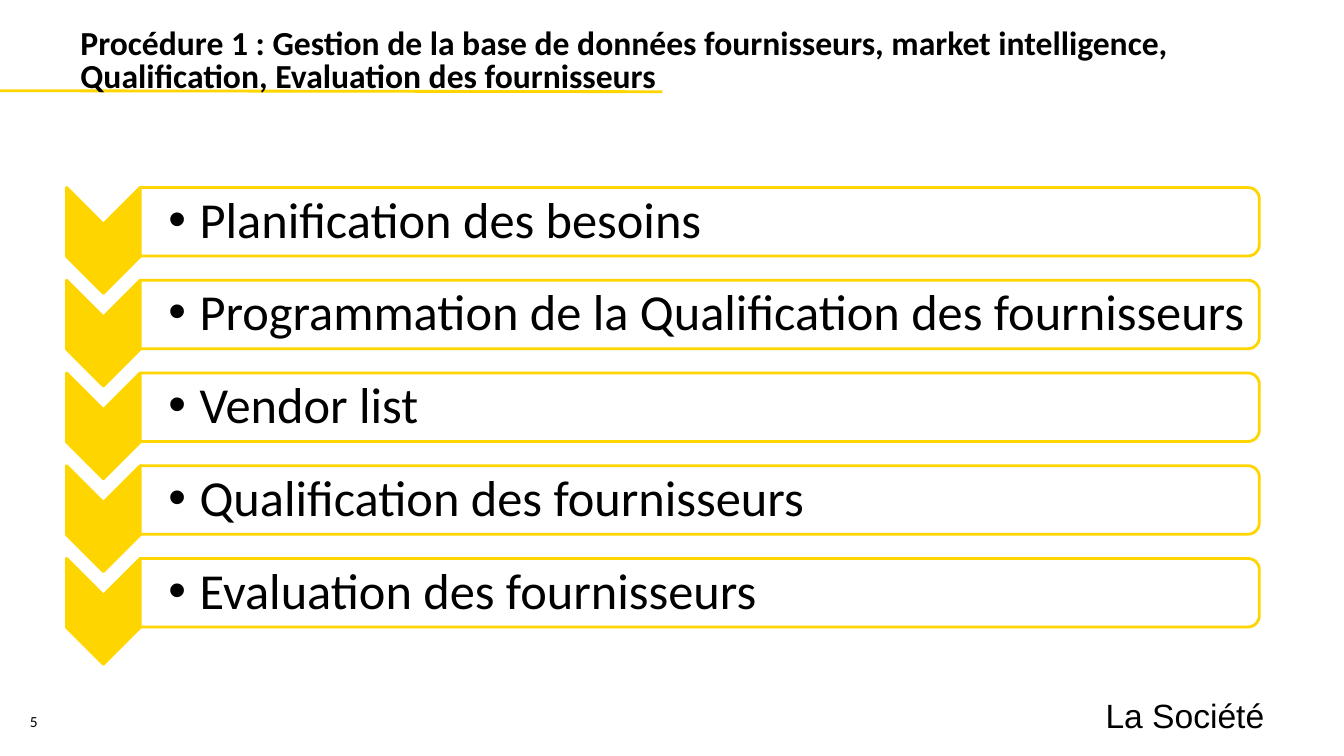
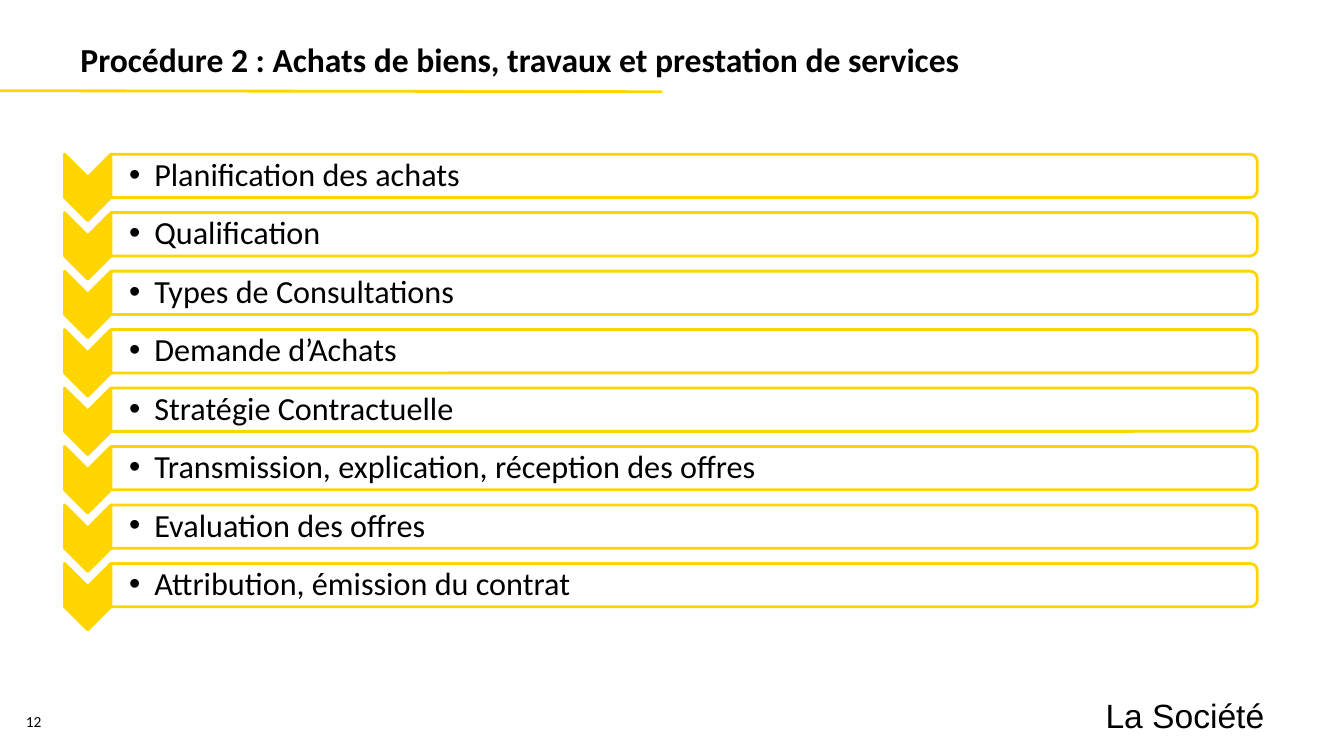
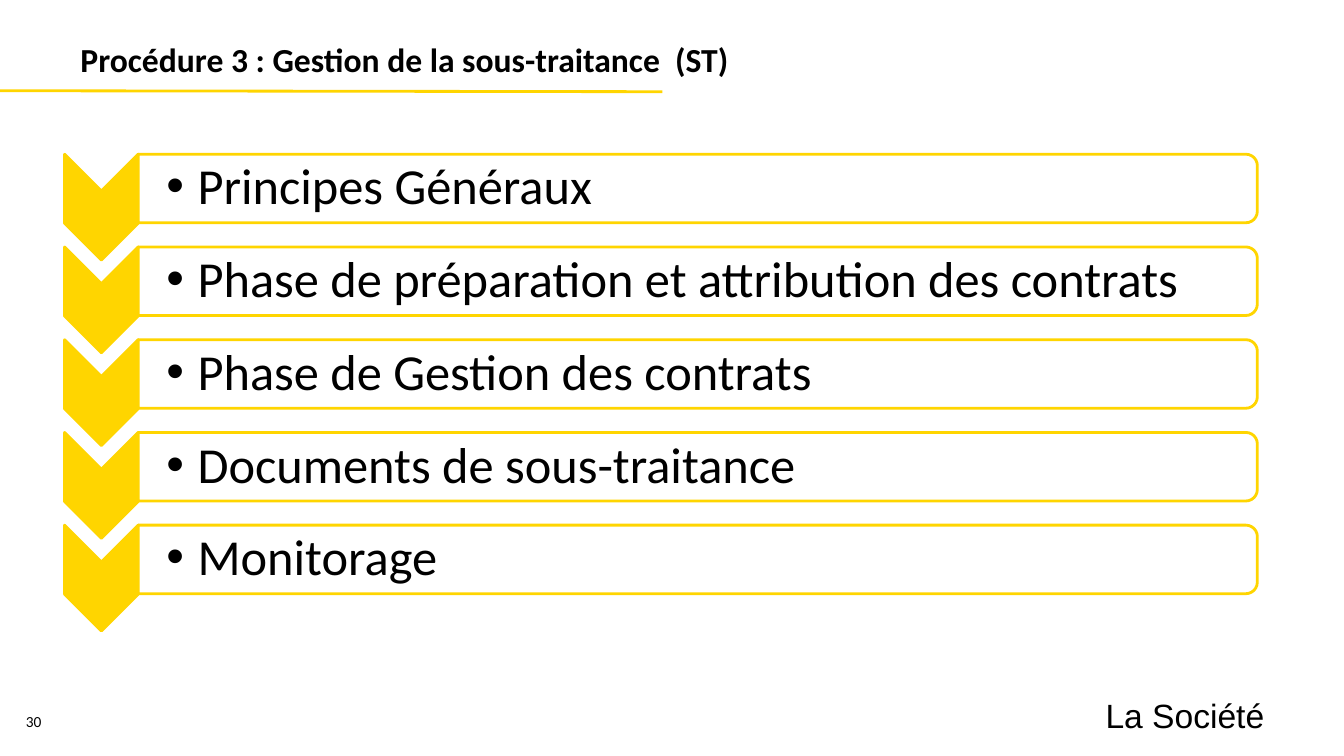
from dataclasses import dataclass

from lxml import etree
from pptx import Presentation
from pptx.dml.color import RGBColor
from pptx.enum.shapes import MSO_CONNECTOR, MSO_SHAPE
from pptx.enum.text import MSO_ANCHOR, PP_ALIGN
from pptx.oxml.ns import qn
from pptx.util import Inches, Pt

STRAIGHT = MSO_CONNECTOR.STRAIGHT
CHEVRON, BAR = MSO_SHAPE.CHEVRON, MSO_SHAPE.ROUND_2_SAME_RECTANGLE
MIDDLE, BOTTOM = MSO_ANCHOR.MIDDLE, MSO_ANCHOR.BOTTOM
LEFT, CENTER, RIGHT = PP_ALIGN.LEFT, PP_ALIGN.CENTER, PP_ALIGN.RIGHT

COLORS = {"yellow": "FFD500", "white": "FFFFFF", "black": "000000"}
LINE_WIDTH = Pt(2)
DEFAULT_INSETS = (0.1, 0.05, 0.1, 0.05)
FOOTER = "La Société"


@dataclass
class StepStyle:
    """Measures of one row in a step list, in inches; size in points."""
    pitch: float
    chevron_width: float
    chevron_height: float
    bar_width: float
    bar_height: float
    text_height: float
    insets: tuple
    indent: float
    size: int


LARGE = StepStyle(0.92, 0.73, 1.05, 11.1, 0.68, 0.62,
                  (0.28, 0.03, 0.03, 0.03), 0.31, 36)
SMALL = StepStyle(0.58, 0.46, 0.66, 11.37, 0.43, 0.39,
                  (0.18, 0.02, 0.02, 0.02), 0.25, 23)

# Page number, title, list style, list left and top, steps
PROCEDURES = [
    ("5", "Procédure 1 : Gestion de la base de données fournisseurs, "
     "market intelligence, Qualification, Evaluation des fournisseurs",
     LARGE, 0.66, 1.86,
     ["Planification des besoins",
      "Programmation de la Qualification des fournisseurs",
      "Vendor list",
      "Qualification des fournisseurs",
      "Evaluation des fournisseurs"]),
    ("12", "Procédure 2 : Achats de biens, travaux et prestation de services",
     SMALL, 0.64, 1.53,
     ["Planification des achats",
      "Qualification",
      "Types de Consultations",
      "Demande d’Achats",
      "Stratégie Contractuelle",
      "Transmission, explication, réception des offres",
      "Evaluation des offres",
      "Attribution, émission du contrat"]),
    ("30", "Procédure 3 : Gestion de la sous-traitance  (ST)",
     LARGE, 0.64, 1.53,
     ["Principes Généraux",
      "Phase de préparation et attribution des contrats",
      "Phase de Gestion des contrats",
      "Documents de sous-traitance",
      "Monitorage"]),
]


def color(name):
    return RGBColor.from_string(COLORS[name])


def add_text(slide, text, area, size, font="Calibri", bold=False,
             align=LEFT, anchor=MIDDLE, insets=DEFAULT_INSETS):
    box = slide.shapes.add_textbox(*map(Inches, area))
    frame = box.text_frame
    frame.word_wrap = True
    frame.vertical_anchor = anchor
    (frame.margin_left, frame.margin_top,
     frame.margin_right, frame.margin_bottom) = map(Inches, insets)
    para = frame.paragraphs[0]
    para.alignment = align
    span = para.add_run()
    span.text = text
    span.font.name = font
    span.font.size = Pt(size)
    span.font.bold = bold
    span.font.color.rgb = color("black")
    return para


def add_bullet(para, indent):
    props = para._p.get_or_add_pPr()
    props.set("marL", str(Inches(indent)))
    props.set("indent", str(-Inches(indent)))
    etree.SubElement(props, qn("a:buFont")).set("typeface", "Arial")
    etree.SubElement(props, qn("a:buChar")).set("char", "•")


def add_turned_shape(slide, kind, left, top, width, height, fill):
    """Place a shape turned by 90 degrees; the area is the one it covers."""
    shift = (width - height) / 2
    shape = slide.shapes.add_shape(
        kind, Inches(left + shift), Inches(top - shift),
        Inches(height), Inches(width))
    shape.rotation = 90
    shape.shadow.inherit = False
    shape.fill.solid()
    shape.fill.fore_color.rgb = color(fill)
    shape.line.color.rgb = color("yellow")
    shape.line.width = LINE_WIDTH


def add_step(slide, text, left, top, style):
    add_turned_shape(slide, CHEVRON, left, top,
                     style.chevron_width, style.chevron_height, "yellow")
    bar_left = left + style.chevron_width
    add_turned_shape(slide, BAR, bar_left, top,
                     style.bar_width, style.bar_height, "white")
    margin = (style.bar_height - style.text_height) / 2
    para = add_text(slide, text,
                    (bar_left, top + margin,
                     style.bar_width - margin, style.text_height),
                    style.size, insets=style.insets)
    add_bullet(para, style.indent)
    para.line_spacing = 0.9


def add_frame(slide, title, number):
    # Rule under the title
    rule = slide.shapes.add_connector(
        STRAIGHT, Inches(0), Inches(0.9), Inches(6.57), Inches(0.91))
    rule.line.color.rgb = color("yellow")
    rule.line.width = LINE_WIDTH
    etree.SubElement(rule._element.spPr, qn("a:effectLst"))

    # Title
    heading = add_text(slide, title, (0.7, 0.19, 11.07, 0.85), 24, bold=True)
    heading.line_spacing = Pt(24)

    # Footer and page number
    add_text(slide, FOOTER, (8.04, 6.89, 4.5, 0.4), 24, font="Arial",
             align=RIGHT, insets=(0, 0, 0, 0))
    add_text(slide, number, (0, 6.94, 0.67, 0.36), 11,
             align=CENTER, anchor=BOTTOM)


def main():
    deck = Presentation()
    deck.slide_width, deck.slide_height = Inches(13.33), Inches(7.5)
    blank = deck.slide_layouts[6]
    for number, title, style, left, top, steps in PROCEDURES:
        slide = deck.slides.add_slide(blank)
        add_frame(slide, title, number)
        for row, step in enumerate(steps):
            add_step(slide, step, left, top + row * style.pitch, style)
    deck.save("out.pptx")


if __name__ == "__main__":
    main()
